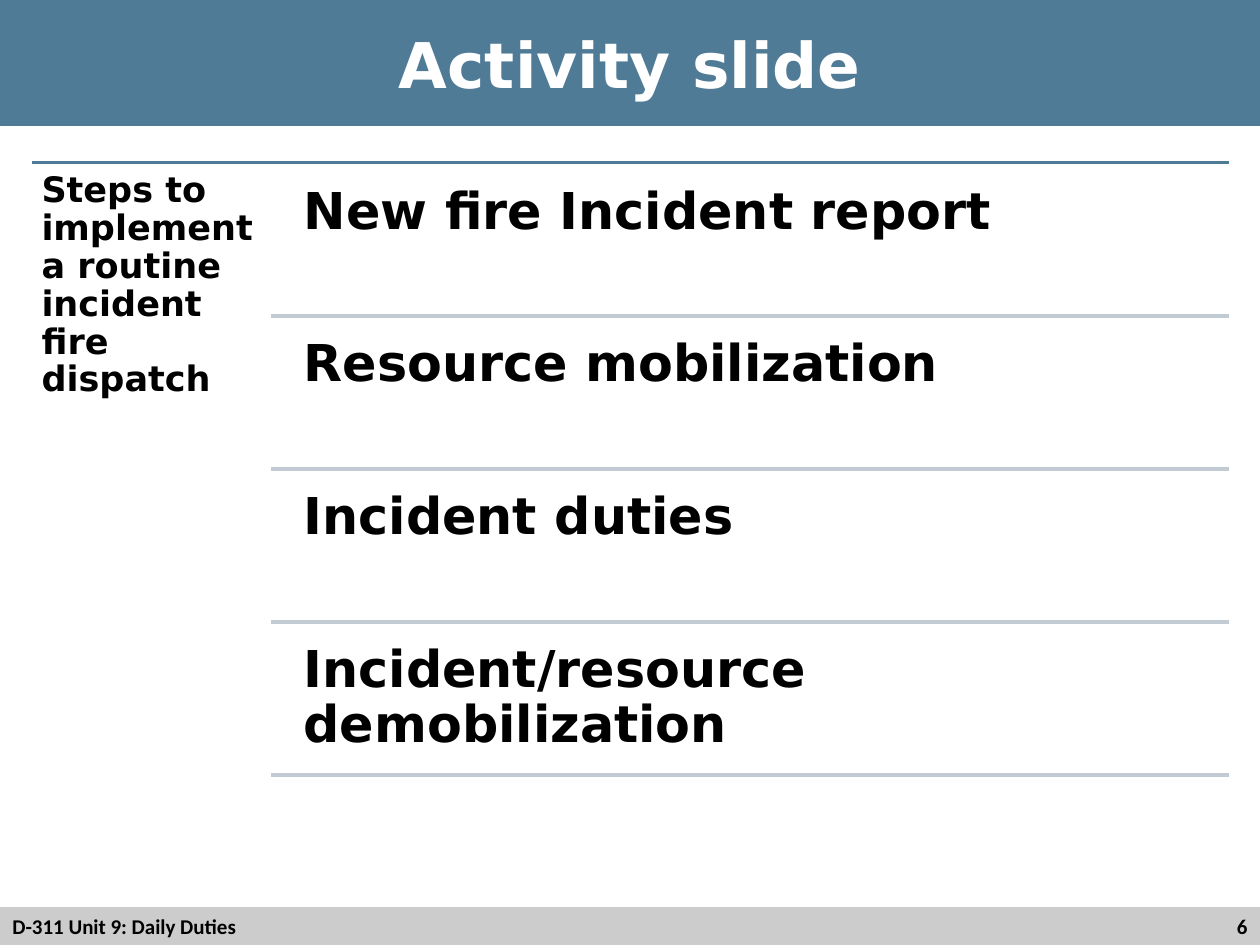
from pptx import Presentation
from pptx import util as u
from pptx.dml.color import RGBColor
from pptx.enum import shapes, text
from pptx.oxml.ns import qn
from lxml import etree

WIDTH, HEIGHT = 10, 7.5
COLORS = {
    "band": "507B97",
    "rule": "C2CBD3",
    "footer": "CCCCCC",
    "ink": "000000",
    "paper": "FFFFFF",
}
HEADING_FONT, FOOTER_FONT = "DejaVu Sans", "Calibri"
LEFT, RIGHT, TOP = 0.25, 9.75, 1.29
STEP_LEFT, STEP_TEXT_LEFT = 2.15, 2.29
FIRST_RULE, ROW_PITCH, ROW_HEIGHT = 2.51, 1.213, 1.16
FOOTER_TOP = HEIGHT * 0.96
STEPS = [
    "New fire Incident report",
    "Resource mobilization",
    "Incident duties",
    "Incident/resource demobilization",
]


def color(name):
    return RGBColor.from_string(COLORS[name])


def box(left, top, width, height):
    return [u.Inches(value) for value in (left, top, width, height)]


def add_band(slide, top, height, fill):
    shape = slide.shapes.add_shape(
        shapes.MSO_SHAPE.RECTANGLE, *box(0, top, WIDTH, height))
    shape.shadow.inherit = False
    shape.fill.solid()
    shape.fill.fore_color.rgb = color(fill)
    shape.line.fill.background()
    return shape


def write(shape, words, size, font=HEADING_FONT, ink="ink",
          align=text.PP_ALIGN.LEFT, anchor=text.MSO_ANCHOR.TOP,
          inset=(0.1, 0.05), spacing=1.0):
    frame = shape.text_frame
    frame.word_wrap = True
    frame.vertical_anchor = anchor
    frame.margin_left = frame.margin_right = u.Inches(inset[0])
    frame.margin_top = frame.margin_bottom = u.Inches(inset[1])
    paragraph = frame.paragraphs[0]
    paragraph.alignment = align
    paragraph.line_spacing = spacing
    run = paragraph.add_run()
    run.text = words
    run.font.size = u.Pt(size)
    run.font.name = font
    run.font.bold = True
    run.font.color.rgb = color(ink)


def add_text(slide, area, words, size, **style):
    write(slide.shapes.add_textbox(*box(*area)), words, size, **style)


def add_rule(slide, left, y, line_color):
    rule = slide.shapes.add_connector(
        shapes.MSO_CONNECTOR.STRAIGHT,
        u.Inches(left), u.Inches(y), u.Inches(RIGHT), u.Inches(y))
    rule.line.color.rgb = color(line_color)
    rule.line.width = u.Pt(2)
    etree.SubElement(rule._element.spPr, qn("a:effectLst"))


def add_footer(slide):
    height = HEIGHT - FOOTER_TOP
    style = {"font": FOOTER_FONT, "anchor": text.MSO_ANCHOR.MIDDLE}
    add_band(slide, FOOTER_TOP, height, "footer")
    add_text(slide, (0, FOOTER_TOP, 6, height),
             "D-311 Unit 9: Daily Duties", 12, **style)
    add_text(slide, (7.67, FOOTER_TOP, WIDTH - 7.67, height), "6", 12,
             align=text.PP_ALIGN.RIGHT, **style)


def add_title(slide):
    write(add_band(slide, 0, 1, "band"), "Activity slide", 36, ink="paper",
          align=text.PP_ALIGN.CENTER, anchor=text.MSO_ANCHOR.MIDDLE)


def add_steps(slide):
    add_rule(slide, LEFT, TOP, "band")
    add_text(slide, (LEFT, TOP, STEP_LEFT - LEFT, 4.92),
             "Steps to implement a routine incident fire dispatch", 20,
             inset=(0.08, 0.08), spacing=0.9)
    for row, step in enumerate(STEPS):
        rule_y = FIRST_RULE + row * ROW_PITCH
        area = (STEP_TEXT_LEFT, rule_y - ROW_HEIGHT,
                RIGHT - STEP_TEXT_LEFT, ROW_HEIGHT)
        add_text(slide, area, step, 29, inset=(0.12, 0.12), spacing=0.9)
        add_rule(slide, STEP_LEFT, rule_y, "rule")


def main():
    presentation = Presentation()
    presentation.slide_width = u.Inches(WIDTH)
    presentation.slide_height = u.Inches(HEIGHT)
    slide = presentation.slides.add_slide(presentation.slide_layouts[6])
    add_footer(slide)
    add_title(slide)
    add_steps(slide)
    presentation.save("out.pptx")


if __name__ == "__main__":
    main()
